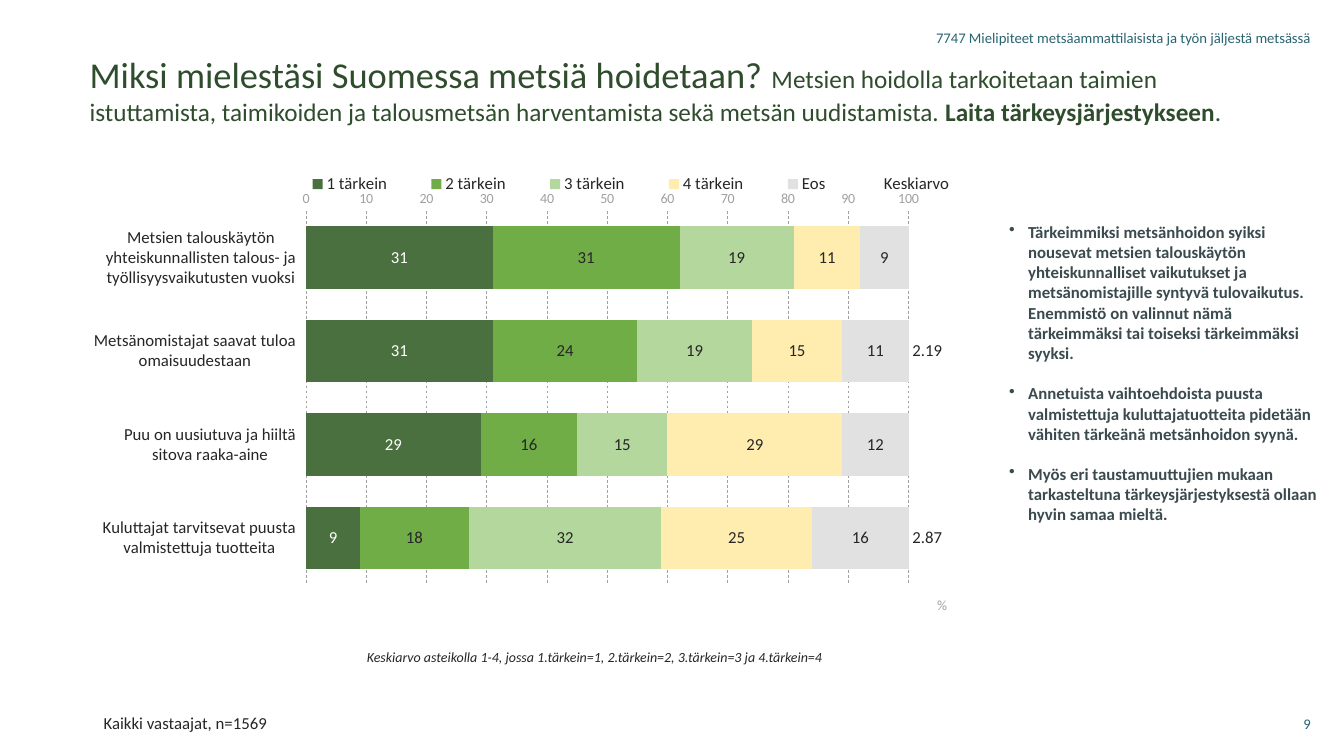
"""Build the survey slide on why forests are managed in Finland."""
from dataclasses import dataclass

import pptx
import pptx.chart.data
import pptx.dml.color
import pptx.enum.chart
import pptx.enum.dml
import pptx.enum.text
import pptx.oxml
import pptx.oxml.ns
import pptx.util
from pptx.util import Inches


@dataclass(frozen=True)
class Theme:
    font: str = "Calibri"
    teal: str = "2A6471"
    green: str = "2F4D2D"
    ink: str = "262626"
    slate: str = "3A4A4E"
    grey: str = "A0A0A0"
    white: str = "FFFFFF"
    title: float = 26
    subtitle: float = 18
    body: float = 12
    header: float = 10.5
    small: float = 10


theme = Theme()


def style_font(font, size, color, bold=False, italic=False):
    font.name = theme.font
    font.size = pptx.util.Pt(size)
    font.bold = bold
    font.italic = italic
    font.color.rgb = pptx.dml.color.RGBColor.from_string(color)


def add_text(paragraphs, box, size=theme.body, color=theme.ink, italic=False, bold=False,
             align=pptx.enum.text.PP_ALIGN.LEFT, anchor=pptx.enum.text.MSO_ANCHOR.TOP,
             line_spacing=1.0, gap=0, bullet=False):
    frame = slide.shapes.add_textbox(*[Inches(length) for length in box]).text_frame
    frame.word_wrap = True
    frame.vertical_anchor = anchor
    for index, runs in enumerate(paragraphs):
        paragraph = frame.paragraphs[0] if index == 0 else frame.add_paragraph()
        paragraph.alignment = align
        paragraph.line_spacing = line_spacing
        if index and gap:
            paragraph.space_before = pptx.util.Pt(gap)
        if bullet:
            properties = paragraph._p.get_or_add_pPr()
            properties.set("marL", str(Inches(0.19)))
            properties.set("indent", str(Inches(-0.19)))
            properties.append(pptx.oxml.parse_xml(
                f'<a:buChar {pptx.oxml.ns.nsdecls("a")} char="•"/>'))
        for text, changes in runs:
            run = paragraph.add_run()
            run.text = text
            style_font(run.font, **{"size": size, "color": color, "bold": bold,
                                    "italic": italic, **changes})


presentation = pptx.Presentation()
presentation.slide_width = Inches(13.33)
presentation.slide_height = Inches(7.5)
slide = presentation.slides.add_slide(presentation.slide_layouts[6])

corner_format = {"size": theme.header, "color": theme.teal,
                 "align": pptx.enum.text.PP_ALIGN.RIGHT,
                 "anchor": pptx.enum.text.MSO_ANCHOR.MIDDLE}
add_text([[("7747 Mielipiteet metsäammattilaisista ja työn jäljestä metsässä", {})]],
         (8.6, 0.17, 4.5, 0.4), **corner_format)
add_text([[("9", {})]], (12.66, 6.98, 0.44, 0.4), **corner_format)

add_text([[
    ("Miksi mielestäsi Suomessa metsiä hoidetaan? ", {"size": theme.title}),
    ("Metsien hoidolla tarkoitetaan taimien istuttamista, taimikoiden ja talousmetsän "
     "harventamista sekä metsän uudistamista. ", {}),
    ("Laita tärkeysjärjestykseen", {"bold": True}),
    (".", {}),
]], (0.79, 0.47, 11.47, 0.84), size=theme.subtitle, color=theme.green)

chart_data = pptx.chart.data.CategoryChartData()
chart_data.categories = [
    "Metsien talouskäytön yhteiskunnallisten talous- ja työllisyysvaikutusten vuoksi",
    "Metsänomistajat saavat tuloa omaisuudestaan",
    "Puu on uusiutuva ja hiiltä sitova raaka-aine",
    "Kuluttajat tarvitsevat puusta valmistettuja tuotteita",
]
answers = [
    ("1 tärkein", (31, 31, 29, 9), "4A7040", theme.white),
    ("2 tärkein", (31, 24, 16, 18), "70AD47", theme.ink),
    ("3 tärkein", (19, 19, 15, 32), "B3D79D", theme.ink),
    ("4 tärkein", (11, 15, 29, 25), "FFECAF", theme.ink),
    ("Eos", (9, 11, 12, 16), "E1E1E1", theme.ink),
    ("Keskiarvo", (2.10, 2.19, 2.48, 2.87), None, theme.ink),
]
for name, values, fill_color, label_color in answers:
    chart_data.add_series(name, values)
chart = slide.shapes.add_chart(
    pptx.enum.chart.XL_CHART_TYPE.BAR_STACKED,
    Inches(0.93), Inches(1.62), Inches(8.87), Inches(4.59), chart_data).chart
style_font(chart.font, theme.body, theme.slate)
chart.has_title = False

plot = chart.plots[0]
plot.gap_width = 50
plot.overlap = 100
plot.vary_by_categories = False
for series, (name, values, fill_color, label_color) in zip(plot.series, answers):
    series.format.line.fill.background()
    labels = series.data_labels
    labels.show_value = True
    style_font(labels.font, theme.body, label_color)
    if fill_color:
        series.format.fill.solid()
        series.format.fill.fore_color.rgb = pptx.dml.color.RGBColor.from_string(fill_color)
        labels.number_format = "#,##0"
        labels.position = pptx.enum.chart.XL_LABEL_POSITION.CENTER
    else:
        series.format.fill.background()
        labels.number_format = "#,##0.00"
        labels.position = pptx.enum.chart.XL_LABEL_POSITION.INSIDE_BASE
    labels.number_format_is_linked = False

category_axis = chart.category_axis
category_axis.reverse_order = True
category_axis.crosses = pptx.enum.chart.XL_AXIS_CROSSES.MAXIMUM
category_axis.tick_label_position = pptx.enum.chart.XL_TICK_LABEL_POSITION.LOW
style_font(category_axis.tick_labels.font, theme.body, theme.ink)

value_axis = chart.value_axis
value_axis.minimum_scale = 0
value_axis.maximum_scale = 100.01
value_axis.major_unit = 10
value_axis.tick_labels.number_format = "General"
value_axis.tick_labels.number_format_is_linked = False
style_font(value_axis.tick_labels.font, theme.small, theme.grey)
gridline = value_axis.major_gridlines.format.line
gridline.color.rgb = pptx.dml.color.RGBColor.from_string(theme.grey)
gridline.width = pptx.util.Pt(0.5)
gridline.dash_style = pptx.enum.dml.MSO_LINE.DASH
for axis in (category_axis, value_axis):
    axis.major_tick_mark = pptx.enum.chart.XL_TICK_MARK.NONE
    axis.minor_tick_mark = pptx.enum.chart.XL_TICK_MARK.NONE
    axis.format.line.fill.background()

value_axis.axis_title.text_frame.text = "%"
style_font(value_axis.axis_title.text_frame.paragraphs[0].runs[0].font,
           theme.small, theme.grey)

chart.has_legend = True
chart.legend.position = pptx.enum.chart.XL_LEGEND_POSITION.TOP
chart.legend.include_in_layout = False
style_font(chart.legend.font, theme.body, theme.ink)

layouts = [
    (chart._chartSpace.chart.plotArea, {"x": 0.236, "y": 0.103, "w": 0.675, "h": 0.808}),
    (chart.legend._element, {"x": 0.2, "y": 0.01, "w": 0.8, "h": 0.07}),
    (value_axis.axis_title._element, {"x": 0.94, "y": 0.93}),
]
for element, sizes in layouts:
    for old_layout in element.findall(pptx.oxml.ns.qn("c:layout")):
        element.remove(old_layout)
    target = '<c:layoutTarget val="inner"/>' if element is layouts[0][0] else ""
    modes = "".join(f'<c:{key}Mode val="edge"/>' for key in "xy")
    lengths = "".join(f'<c:{key} val="{value}"/>' for key, value in sizes.items())
    layout = pptx.oxml.parse_xml(
        f'<c:layout {pptx.oxml.ns.nsdecls("c")}><c:manualLayout>'
        f'{target}{modes}{lengths}</c:manualLayout></c:layout>')
    element.insert(0 if target else 1, layout)

add_text([[("Kaikki vastaajat, n=1569", {})]], (0.93, 7.04, 9.18, 0.28), line_spacing=0.9)
add_text([[("Keskiarvo asteikolla 1-4, jossa 1.tärkein=1, 2.tärkein=2, 3.tärkein=3 "
            "ja 4.tärkein=4", {})]],
         (3.54, 6.4, 5.56, 0.28), size=theme.small, italic=True, line_spacing=0.9)

findings = [
    "Tärkeimmiksi metsänhoidon syiksi nousevat metsien talouskäytön yhteiskunnalliset "
    "vaikutukset ja metsänomistajille syntyvä tulovaikutus. Enemmistö on valinnut nämä "
    "tärkeimmäksi tai toiseksi tärkeimmäksi syyksi.",
    "Annetuista vaihtoehdoista puusta valmistettuja kuluttajatuotteita pidetään vähiten "
    "tärkeänä metsänhoidon syynä.",
    "Myös eri taustamuuttujien mukaan tarkasteltuna tärkeysjärjestyksestä ollaan hyvin "
    "samaa mieltä.",
]
add_text([[(finding, {})] for finding in findings], (9.91, 2.15, 3.27, 3.33),
         color=theme.slate, bold=True, gap=14.5, bullet=True)

presentation.save("out.pptx")
